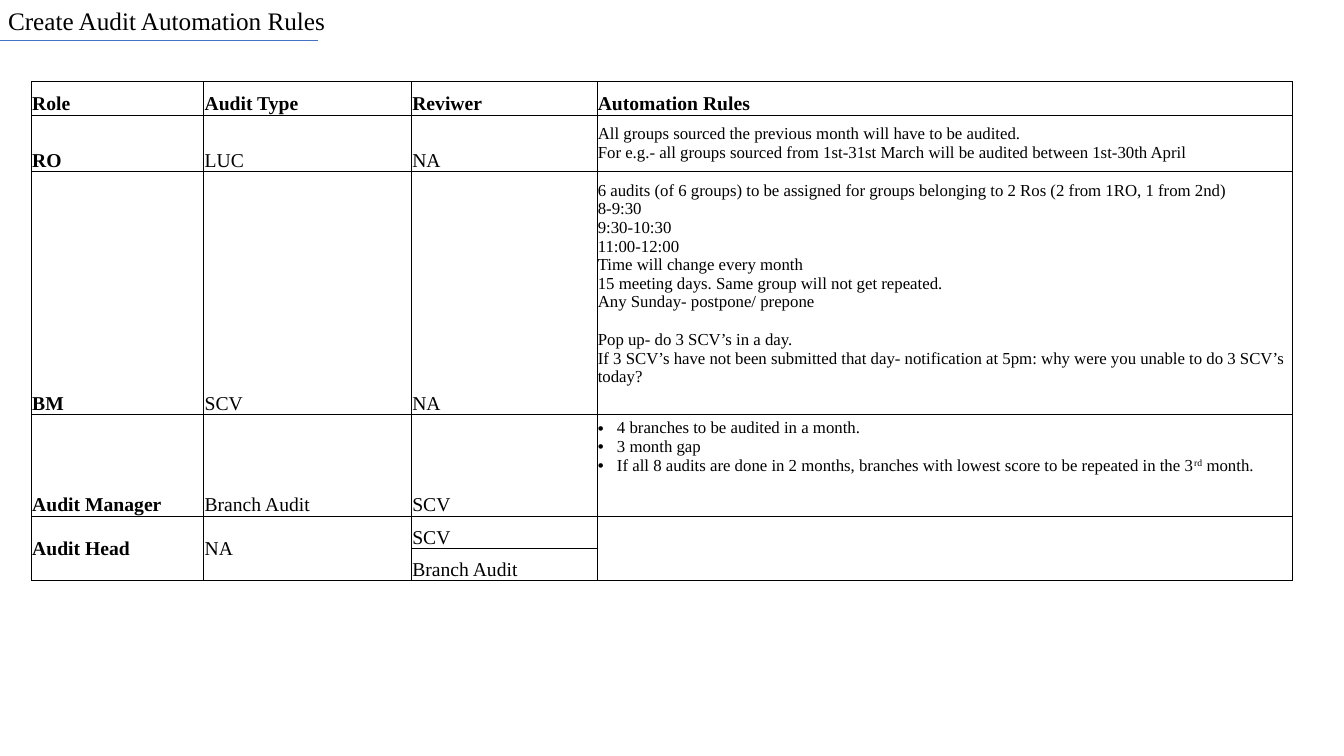
"""Build the audit automation rules slide."""
from dataclasses import dataclass

from lxml.etree import SubElement
from pptx import Presentation
from pptx.dml.color import RGBColor
from pptx.enum.shapes import MSO_CONNECTOR as Connector
from pptx.enum.text import MSO_ANCHOR as Anchor, MSO_AUTO_SIZE as AutoSize, PP_ALIGN as Align
from pptx.oxml import parse_xml
from pptx.oxml.ns import nsdecls, qn
from pptx.util import Inches, Pt


@dataclass(frozen=True)
class Theme:
    """Colours, font and type sizes of the slide."""
    font: str = "Times New Roman"
    ink: str = "000000"
    accent: str = "4472C4"
    title: int = 18
    label: int = 14
    rule: int = 12
    line: float = 0.5


THEME = Theme()
TITLE = "Create Audit Automation Rules"
HEADERS = ("Role", "Audit Type", "Reviwer", "Automation Rules")
ROLES = (
    ("RO", "LUC", "NA"),
    ("BM", "SCV", "NA"),
    ("Audit Manager", "Branch Audit", "SCV"),
    ("Audit Head", "NA", "SCV"),
    ("", "", "Branch Audit"),
)
RO_RULES = (
    "All groups sourced the previous month will have to be audited.",
    "For e.g.- all groups sourced from 1st-31st March will be audited between 1st-30th April",
)
BM_RULES = (
    "6 audits (of 6 groups) to be assigned for groups belonging to 2 Ros (2 from 1RO, 1 from 2nd)",
    "8-9:30",
    "9:30-10:30",
    "11:00-12:00",
    "Time will change every month",
    "15 meeting days. Same group will not get repeated.",
    "Any Sunday- postpone/ prepone",
    "Pop up- do 3 SCV’s in a day.",
    "If 3 SCV’s have not been submitted that day- notification at 5pm: "
    "why were you unable to do 3 SCV’s today?",
)
POP_UP = 7
MANAGER_RULES = (
    "4 branches to be audited in a month.",
    "3 month gap",
    ("If all 8 audits are done in 2 months, branches with lowest score to be repeated in the 3",
     "rd", " month."),
)
RULES = {1: (RO_RULES, 0), 2: (BM_RULES, 0.19), 3: (MANAGER_RULES, 0.37)}
COLUMNS = (1.71, 2.06, 1.84, 6.9)
ROWS = (0.33, 0.56, 2.41, 1.01, 0.32, 0.32)
HEAD_ROW = 4
RULE_COLUMN = 3


def style(para, size, bold=False):
    """Format every run of a paragraph."""
    for span in para.runs:
        span.font.name, span.font.size, span.font.bold = THEME.font, Pt(size), bold
        span.font.color.rgb = RGBColor.from_string(THEME.ink)


def add_bullet(para):
    """Give a paragraph a hanging bullet."""
    props = para._p.get_or_add_pPr()
    props.set("marL", str(Inches(0.19)))
    props.set("indent", str(-Inches(0.19)))
    SubElement(props, qn("a:buFont"), typeface="Arial")
    SubElement(props, qn("a:buChar"), char="•")


def prepare_cell(cell):
    """Clear the fill, tighten the margins and draw the four borders."""
    cell.fill.background()
    cell.margin_left = cell.margin_right = cell.margin_top = Inches(0.01)
    cell.margin_bottom = 0
    cell.vertical_anchor = Anchor.BOTTOM
    for index, side in enumerate("LRTB"):
        border = parse_xml(
            f'<a:ln{side} {nsdecls("a")} w="{Pt(THEME.line)}"><a:solidFill>'
            f'<a:srgbClr val="{THEME.ink}"/></a:solidFill></a:ln{side}>')
        cell._tc.get_or_add_tcPr().insert(index, border)


def fill_rules(cell, rules, bottom):
    """Write one rule per paragraph, centred above the bottom margin."""
    cell.vertical_anchor = Anchor.MIDDLE
    cell.margin_bottom = Inches(bottom)
    frame = cell.text_frame
    for index, rule in enumerate(rules):
        para = frame.add_paragraph() if index else frame.paragraphs[0]
        parts = (rule,) if isinstance(rule, str) else rule
        for part in parts:
            para.add_run().text = part
        style(para, THEME.rule)
        if len(parts) > 1:
            para.runs[1].font._element.set("baseline", "30000")
        if rules is MANAGER_RULES:
            add_bullet(para)
        if rules is BM_RULES and index == POP_UP:
            para.space_before = Pt(13.4)


def add_title(page):
    """Place the title and the line beneath it."""
    title = page.shapes.title
    title.left, title.top, title.width, title.height = map(Inches, (-0.02, 0, 8.08, 0.4))
    frame = title.text_frame
    frame.text = TITLE
    frame.auto_size, frame.vertical_anchor = AutoSize.NONE, Anchor.TOP
    frame.paragraphs[0].alignment = Align.LEFT
    style(frame.paragraphs[0], THEME.title)
    underline = page.shapes.add_connector(
        Connector.STRAIGHT, 0, Inches(0.4), Inches(3.15), Inches(0.4))
    underline.line.color.rgb = RGBColor.from_string(THEME.accent)
    underline.line.width = Pt(THEME.line)
    SubElement(underline._element.spPr, qn("a:effectLst"))


def add_rules_table(page):
    """Place the table of roles and rules."""
    table = page.shapes.add_table(
        len(ROWS), len(COLUMNS), Inches(0.31), Inches(0.81),
        Inches(sum(COLUMNS)), Inches(sum(ROWS))).table
    table.first_row = table.horz_banding = False
    for column, width in zip(table.columns, COLUMNS):
        column.width = Inches(width)
    for row, height in zip(table.rows, ROWS):
        row.height = Inches(height)
    for cell in table.iter_cells():
        prepare_cell(cell)
    for row, labels in enumerate((HEADERS, *ROLES)):
        for column, label in enumerate(labels):
            para = table.cell(row, column).text_frame.paragraphs[0]
            para.text = label
            style(para, THEME.label, bold=row == 0 or column == 0)
    for row, (rules, bottom) in RULES.items():
        fill_rules(table.cell(row, RULE_COLUMN), rules, bottom)
    for column in (0, 1, RULE_COLUMN):
        cell = table.cell(HEAD_ROW, column)
        cell.merge(table.cell(HEAD_ROW + 1, column))
        cell.vertical_anchor = Anchor.MIDDLE


def main():
    """Build and save the deck."""
    deck = Presentation()
    deck.slide_width, deck.slide_height = Inches(13.33), Inches(7.5)
    page = deck.slides.add_slide(deck.slide_layouts.get_by_name("Title Only"))
    add_title(page)
    add_rules_table(page)
    deck.save("out.pptx")


if __name__ == "__main__":
    main()
